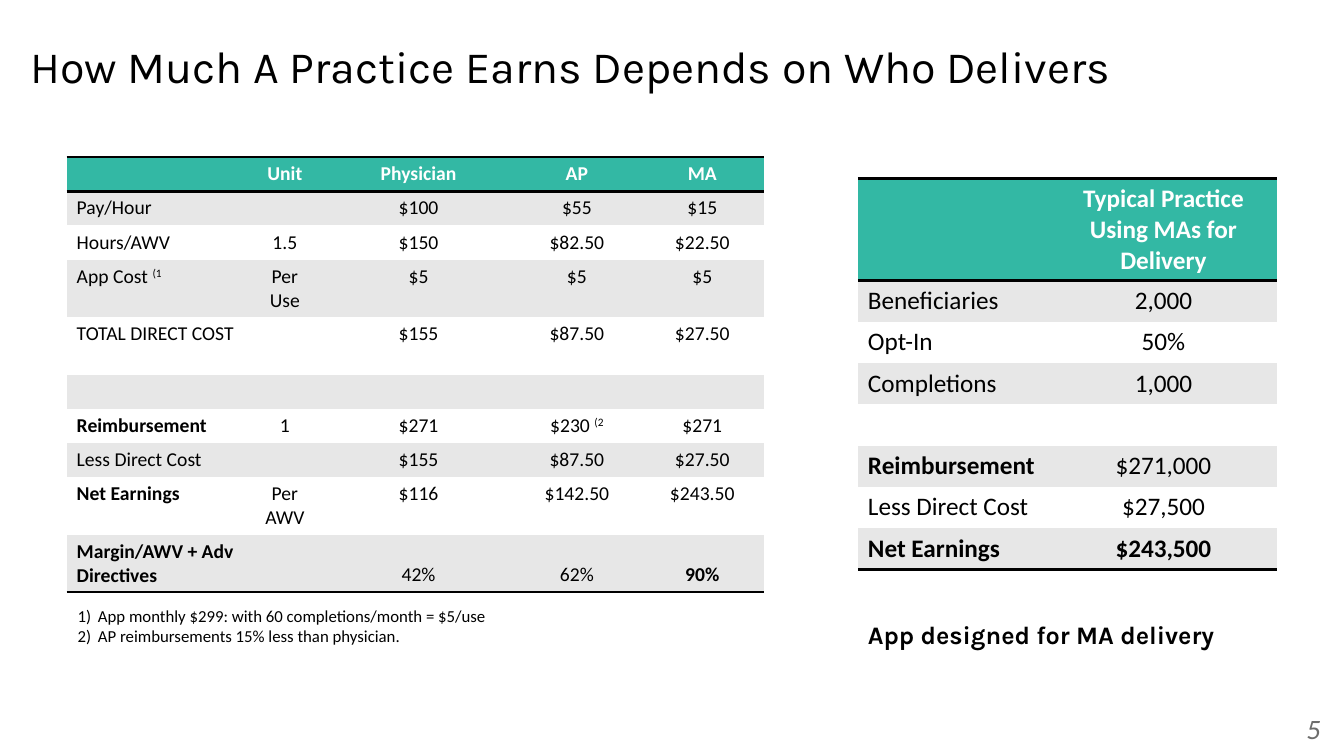
from dataclasses import dataclass

import pptx
import pptx.dml.color
import pptx.enum.text
import pptx.oxml.ns
import pptx.util
from lxml import etree

Cm = pptx.util.Cm
Pt = pptx.util.Pt
Align = pptx.enum.text.PP_ALIGN
Anchor = pptx.enum.text.MSO_ANCHOR
qn = pptx.oxml.ns.qn


@dataclass(frozen=True)
class Theme:
    heading_font: str = "Karla"
    body_font: str = "Calibri"
    ink: str = "000000"
    paper: str = "FFFFFF"
    band: str = "E7E7E7"
    accent: str = "33B8A4"
    muted: str = "6D6D6C"
    title_size: int = 32
    number_size: int = 20
    message_size: int = 18
    cost_size: int = 14
    practice_size: int = 18
    note_size: int = 12
    rule_width: int = 2


THEME = Theme()

# In a cell, a leading * means bold and ^ starts a superscript.
COST_ROWS = [
    ["", "*Unit", "*Physician", "*AP", "*MA"],
    ["Pay/Hour", "", "$100", "$55", "$15"],
    ["Hours/AWV", "1.5", "$150", "$82.50", "$22.50"],
    ["App Cost ^(1", "Per Use", "$5", "$5", "$5"],
    ["TOTAL DIRECT COST", "", "$155", "$87.50", "$27.50"],
    ["", "", "", "", ""],
    ["*Reimbursement", "1", "$271", "$230 ^(2", "$271"],
    ["Less Direct Cost", "", "$155", "$87.50", "$27.50"],
    ["*Net Earnings", "Per AWV", "$116", "$142.50", "$243.50"],
    ["*Margin/AWV + Adv Directives", "", "42%", "62%", "*90%"],
]
PRACTICE_ROWS = [
    ["", "*Typical Practice Using MAs for Delivery"],
    ["Beneficiaries", "2,000"],
    ["Opt-In", "50%"],
    ["Completions", "1,000"],
    ["", ""],
    ["*Reimbursement", "$271,000"],
    ["Less Direct Cost", "$27,500"],
    ["*Net Earnings", "*$243,500"],
]
NOTES = [
    "1)\tApp monthly $299: with 60 completions/month = $5/use",
    "2)\tAP reimbursements 15% less than physician.",
]


def set_font(font, name, size, color, bold=False, italic=False):
    font.name, font.size = name, Pt(size)
    font.bold, font.italic = bold, italic
    font.color.rgb = pptx.dml.color.RGBColor.from_string(color)


def add_text(page, area, lines, anchor=Anchor.TOP, **font):
    """Place one text box in area (left, top, width, height in cm)."""
    box = page.shapes.add_textbox(*map(Cm, area))
    frame = box.text_frame
    frame.word_wrap = True
    frame.vertical_anchor = anchor
    for index, line in enumerate(lines):
        para = frame.paragraphs[0] if index == 0 else frame.add_paragraph()
        para.add_run().text = line
        set_font(para.font, **font)
    return frame.paragraphs


def set_borders(cell, top, bottom):
    """Rule the cell above or below and clear its other edges."""
    properties = cell._tc.get_or_add_tcPr()
    for edge, ruled in (("L", False), ("R", False), ("T", top), ("B", bottom)):
        line = etree.SubElement(properties, qn(f"a:ln{edge}"))
        if ruled:
            line.set("w", str(Pt(THEME.rule_width)))
            fill = etree.SubElement(line, qn("a:solidFill"))
            etree.SubElement(fill, qn("a:srgbClr")).set("val", THEME.ink)
        else:
            line.set("w", "0")
            etree.SubElement(line, qn("a:noFill"))


def fill_cell(cell, text, size, color, align):
    para = cell.text_frame.paragraphs[0]
    para.alignment = align
    set_font(para.font, THEME.body_font, size, color, bold=text.startswith("*"))
    if not text:
        # An empty cell keeps the type size so that its row stays low
        etree.SubElement(para._p, qn("a:endParaRPr")).set("sz", str(size * 100))
        return
    base, _, raised = text.lstrip("*").partition("^")
    para.add_run().text = base
    if raised:
        span = para.add_run()
        span.text = raised
        span.font._element.set("baseline", "30000")


def add_banded_table(page, left, top, rows, widths, heights, size):
    """Place a table with a coloured header, grey bands and black rules."""
    table = page.shapes.add_table(
        len(rows), len(widths), Cm(left), Cm(top),
        Cm(sum(widths)), Cm(sum(heights))).table
    table.first_row = table.horz_banding = False
    for column, width in zip(table.columns, widths):
        column.width = Cm(width)
    last = len(rows) - 1
    for r, (texts, height) in enumerate(zip(rows, heights)):
        table.rows[r].height = Cm(height)
        fill = THEME.accent if r == 0 else THEME.band if r % 2 else THEME.paper
        color = THEME.paper if r == 0 else THEME.ink
        for c, text in enumerate(texts):
            cell = table.cell(r, c)
            set_borders(cell, top=r in (0, 1), bottom=r in (0, last))
            cell.fill.solid()
            cell.fill.fore_color.rgb = pptx.dml.color.RGBColor.from_string(fill)
            fill_cell(cell, text, size, color, Align.CENTER if c else Align.LEFT)
    return table


def add_title(page, area):
    para, = add_text(page, area, ["How Much A Practice Earns Depends on Who Delivers"],
                     Anchor.MIDDLE, name=THEME.heading_font,
                     size=THEME.title_size, color=THEME.ink)
    para.line_spacing = 0.9


def add_cost_panel(page, left, top):
    """Cost per delivering role, with its footnotes below."""
    low, tall = 0.86, 1.45
    heights = [tall if r in (3, 4, 8, 9) else low for r in range(len(COST_ROWS))]
    table = add_banded_table(page, left, top, COST_ROWS,
                             [4.52, 1.96, 4.78, 3.2, 3.12], heights, THEME.cost_size)
    for c in range(2, 5):
        table.cell(len(COST_ROWS) - 1, c).vertical_anchor = Anchor.BOTTOM
    notes = add_text(page, (left, top + 11.18, 11.81, 1.27), NOTES,
                     name=THEME.body_font, size=THEME.note_size, color=THEME.ink)
    for para in notes:
        properties = para._p.get_or_add_pPr()
        properties.set("marL", str(Cm(0.54)))
        properties.set("indent", str(-Cm(0.51)))


def add_practice_panel(page, left, top):
    """Earnings of a typical practice, with the message below."""
    heights = [2.57] + [1.04] * (len(PRACTICE_ROWS) - 1)
    add_banded_table(page, left, top, PRACTICE_ROWS, [4.83, 5.74], heights,
                     THEME.practice_size)
    para, = add_text(page, (left, top + 10.92, 11.28, 1.22),
                     ["App designed for MA delivery"], Anchor.MIDDLE,
                     name=THEME.heading_font, size=THEME.message_size,
                     color=THEME.ink, bold=True)
    para.line_spacing = 0.9


def add_page_number(page, area):
    para, = add_text(page, area, ["5"], name=THEME.body_font,
                     size=THEME.number_size, color=THEME.muted, italic=True)
    para.alignment = Align.RIGHT


def main():
    deck = pptx.Presentation()
    deck.slide_width, deck.slide_height = Cm(33.87), Cm(19.05)
    page = deck.slides.add_slide(deck.slide_layouts[6])
    add_title(page, (0.51, 1.12, 32.36, 1.22))
    add_page_number(page, (25.91, 17.81, 7.62, 1.02))
    add_cost_panel(page, 1.68, 3.96)
    add_practice_panel(page, 21.62, 4.5)
    deck.save("out.pptx")


if __name__ == "__main__":
    main()
